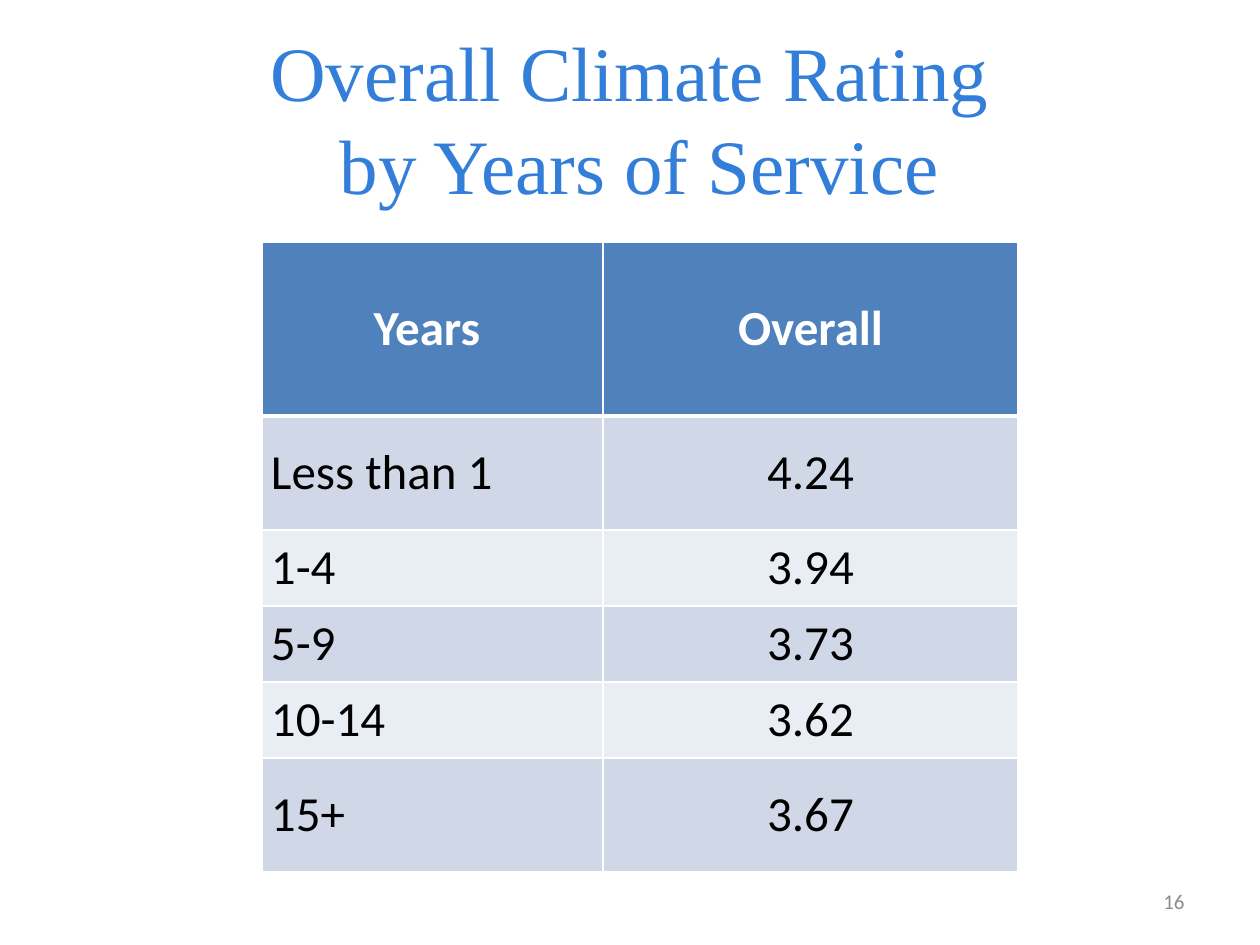
from dataclasses import dataclass

from lxml.etree import SubElement
from pptx import Presentation
from pptx.dml.color import RGBColor
from pptx.enum.text import MSO_ANCHOR, PP_ALIGN
from pptx.oxml.ns import qn
from pptx.util import Emu, Pt

COLORS = {
    "title": "337ED9", "number": "8C8C8C", "header": "4F81BD", "header_text": "FFFFFF",
    "band_dark": "D0D8E8", "band_light": "E9EDF4", "body_text": "000000", "grid": "FFFFFF",
}
EMU_PER_PX = 914400 / 126
COLUMN_WIDTHS = (341, 415)


@dataclass(frozen=True)
class Label:
    text: str
    box: tuple[int, int, int, int]
    font: str
    size: int
    color: str
    align: PP_ALIGN


@dataclass(frozen=True)
class RatingRow:
    years: str
    overall: str
    height: int


LABELS = (
    Label("Overall Climate Rating\v by Years of Service", (63, 38, 1134, 158),
          "Times New Roman", 44, "title", PP_ALIGN.CENTER),
    Label("16", (903, 876, 294, 50), "Calibri", 12, "number", PP_ALIGN.RIGHT),
)
RATINGS = (
    RatingRow("Years\u00a0", "Overall", 174),
    RatingRow("Less than 1", "4.24", 114),
    RatingRow("1-4", "3.94", 76),
    RatingRow("5-9", "3.73", 76),
    RatingRow("10-14", "3.62", 76),
    RatingRow("15+", "3.67", 114),
)


def px(length: int) -> Emu:
    return Emu(round(length * EMU_PER_PX))


def rgb(name: str) -> RGBColor:
    return RGBColor.from_string(COLORS[name])


def style_paragraph(paragraph, font: str, size: int, color: str, align: PP_ALIGN,
                    bold: bool = False) -> None:
    paragraph.alignment = align
    paragraph.font.name = font
    paragraph.font.size = Pt(size)
    paragraph.font.bold = bold
    paragraph.font.color.rgb = rgb(color)


def draw_label(slide, label: Label) -> None:
    frame = slide.shapes.add_textbox(*map(px, label.box)).text_frame
    frame.word_wrap = True
    frame.vertical_anchor = MSO_ANCHOR.MIDDLE
    frame.text = label.text
    style_paragraph(frame.paragraphs[0], label.font, label.size, label.color, label.align)


def add_border(cell, side: str, points: int) -> None:
    line = SubElement(cell._tc.get_or_add_tcPr(), qn(f"a:{side}"), w=str(Pt(points)))
    fill = SubElement(line, qn("a:solidFill"))
    SubElement(fill, qn("a:srgbClr"), val=COLORS["grid"])


def fill_cell(cell, text: str, row: int, column: int) -> None:
    is_header = row == 0
    cell.margin_left = cell.margin_right = px(9)
    cell.margin_top = cell.margin_bottom = 0
    cell.vertical_anchor = MSO_ANCHOR.MIDDLE
    cell.text = text
    style_paragraph(cell.text_frame.paragraphs[0], "Calibri", 28,
                    "header_text" if is_header else "body_text",
                    PP_ALIGN.CENTER if is_header or column else PP_ALIGN.LEFT, is_header)
    for side in ("lnL", "lnR", "lnT", "lnB"):
        thick = (row, side) in ((0, "lnB"), (1, "lnT"))
        add_border(cell, side, 3 if thick else 1)
    band = "band_dark" if row % 2 else "band_light"
    cell.fill.solid()
    cell.fill.fore_color.rgb = rgb("header" if is_header else band)


def draw_ratings(slide, ratings: tuple[RatingRow, ...], left: int, top: int) -> None:
    height = sum(rating.height for rating in ratings)
    table = slide.shapes.add_table(
        len(ratings), len(COLUMN_WIDTHS),
        px(left), px(top), px(sum(COLUMN_WIDTHS)), px(height)).table
    for column, width in zip(table.columns, COLUMN_WIDTHS):
        column.width = px(width)
    for row, rating in enumerate(ratings):
        table.rows[row].height = px(rating.height)
        for column, text in enumerate((rating.years, rating.overall)):
            fill_cell(table.cell(row, column), text, row, column)


def main() -> None:
    """Build the slide of climate ratings by years of service."""
    deck = Presentation()
    deck.slide_width, deck.slide_height = px(1260), px(945)
    slide = deck.slides.add_slide(deck.slide_layouts[6])
    for label in LABELS:
        draw_label(slide, label)
    draw_ratings(slide, RATINGS, 262, 242)
    deck.save("out.pptx")


if __name__ == "__main__":
    main()
